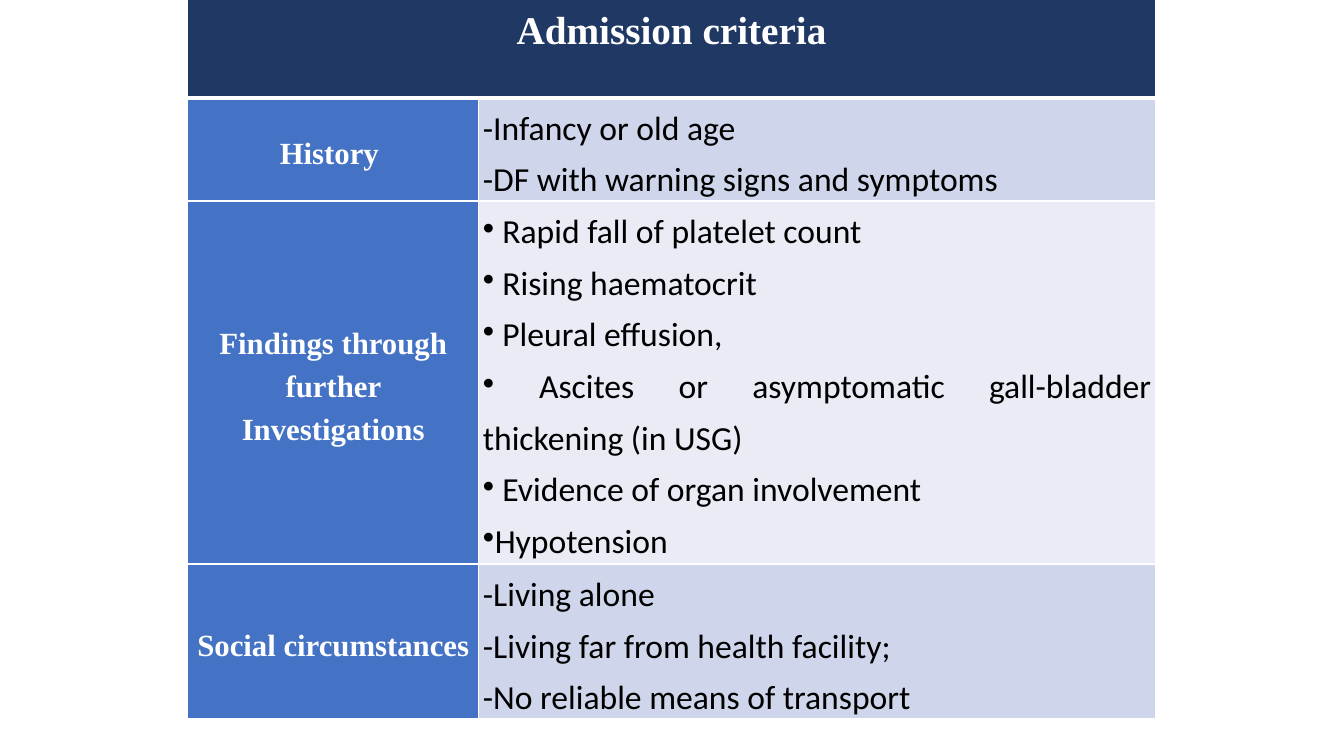
from lxml.etree import SubElement
from pptx import Presentation
from pptx.dml.color import RGBColor
from pptx.enum.text import MSO_ANCHOR, PP_ALIGN
from pptx.oxml.ns import qn
from pptx.util import Inches, Pt

COLORS = {
    "white": "FFFFFF",
    "black": "000000",
    "navy": "203864",
    "blue": "4472C4",
    "band": "CFD5EA",
    "pale": "E9EBF5",
}
COLUMN_WIDTHS = [2.89, 6.71]
ROW_HEIGHTS = [0.99, 0.75, 3.6, 1.39]
CRITERIA = [
    (["History "], ["-Infancy or old age", "-DF with warning signs and symptoms"], False),
    (
        ["Findings through", "further Investigations"],
        [
            " Rapid fall of platelet count ",
            " Rising haematocrit",
            " Pleural effusion, ",
            " Ascites or asymptomatic gall-bladder thickening (in USG)",
            " Evidence of organ involvement ",
            "Hypotension",
        ],
        True,
    ),
    (
        ["Social circumstances"],
        ["-Living alone", "-Living far from health facility; ", "-No reliable means of transport"],
        False,
    ),
]


class CriteriaSlide:
    heading_font = "Times New Roman"
    body_font = "Calibri"
    line_spacing = 1.26

    def __init__(self, deck):
        self.slide = deck.slides.add_slide(deck.slide_layouts[6])

    def add_table(self, left, top, widths, heights):
        frame = self.slide.shapes.add_table(
            len(heights), len(widths), Inches(left), Inches(top),
            Inches(sum(widths)), Inches(sum(heights)),
        )
        table = frame.table
        table.horz_banding = False
        for column, width in zip(table.columns, widths):
            column.width = Inches(width)
        for row, height in zip(table.rows, heights):
            row.height = Inches(height)
        return table

    def set_borders(self, cell, **widths):
        properties = cell._tc.get_or_add_tcPr()
        for side in "LRTB":
            line = SubElement(properties, qn(f"a:ln{side}"), w=str(Pt(widths.get(side, 1))))
            fill = SubElement(line, qn("a:solidFill"))
            SubElement(fill, qn("a:srgbClr"), val=COLORS["white"])

    def fill_cell(self, cell, color, anchor):
        cell.fill.solid()
        cell.fill.fore_color.rgb = RGBColor.from_string(COLORS[color])
        cell.vertical_anchor = anchor
        cell.margin_left = cell.margin_right = Inches(0.04)
        cell.margin_top = cell.margin_bottom = 0

    def set_text(self, cell, lines, size, font, color, bold, align, bulleted=False):
        cell.text_frame.text = "\n".join(lines)
        for para in cell.text_frame.paragraphs:
            para.alignment = align
            para.line_spacing = self.line_spacing
            if bulleted:
                SubElement(para._p.get_or_add_pPr(), qn("a:buChar"), char="•")
            for span in para.runs:
                span.font.size = Pt(size)
                span.font.name = font
                span.font.bold = bold
                span.font.color.rgb = RGBColor.from_string(COLORS[color])

    def add_heading(self, cell, lines, size, fill, anchor):
        self.fill_cell(cell, fill, anchor)
        self.set_text(cell, lines, size, self.heading_font, "white", True, PP_ALIGN.CENTER)

    def add_details(self, cell, lines, fill, bulleted):
        self.fill_cell(cell, fill, MSO_ANCHOR.TOP)
        self.set_text(cell, lines, 24, self.body_font, "black", False, PP_ALIGN.JUSTIFY, bulleted)


def main():
    deck = Presentation()
    deck.slide_width = Inches(13.33)
    deck.slide_height = Inches(7.5)
    page = CriteriaSlide(deck)
    table = page.add_table(1.86, -0.02, COLUMN_WIDTHS, ROW_HEIGHTS)

    header = table.cell(0, 0)
    header.merge(table.cell(0, 1))
    for column in range(len(COLUMN_WIDTHS)):
        page.set_borders(table.cell(0, column), B=3)
    page.add_heading(header, ["Admission criteria"], 28, "navy", MSO_ANCHOR.TOP)

    for row, (heading, details, bulleted) in enumerate(CRITERIA, start=1):
        for column in range(len(COLUMN_WIDTHS)):
            page.set_borders(table.cell(row, column), T=3 if row == 1 else 1)
        page.add_heading(table.cell(row, 0), heading, 22, "blue", MSO_ANCHOR.MIDDLE)
        page.add_details(table.cell(row, 1), details, "band" if row % 2 else "pale", bulleted)

    deck.save("out.pptx")


if __name__ == "__main__":
    main()
